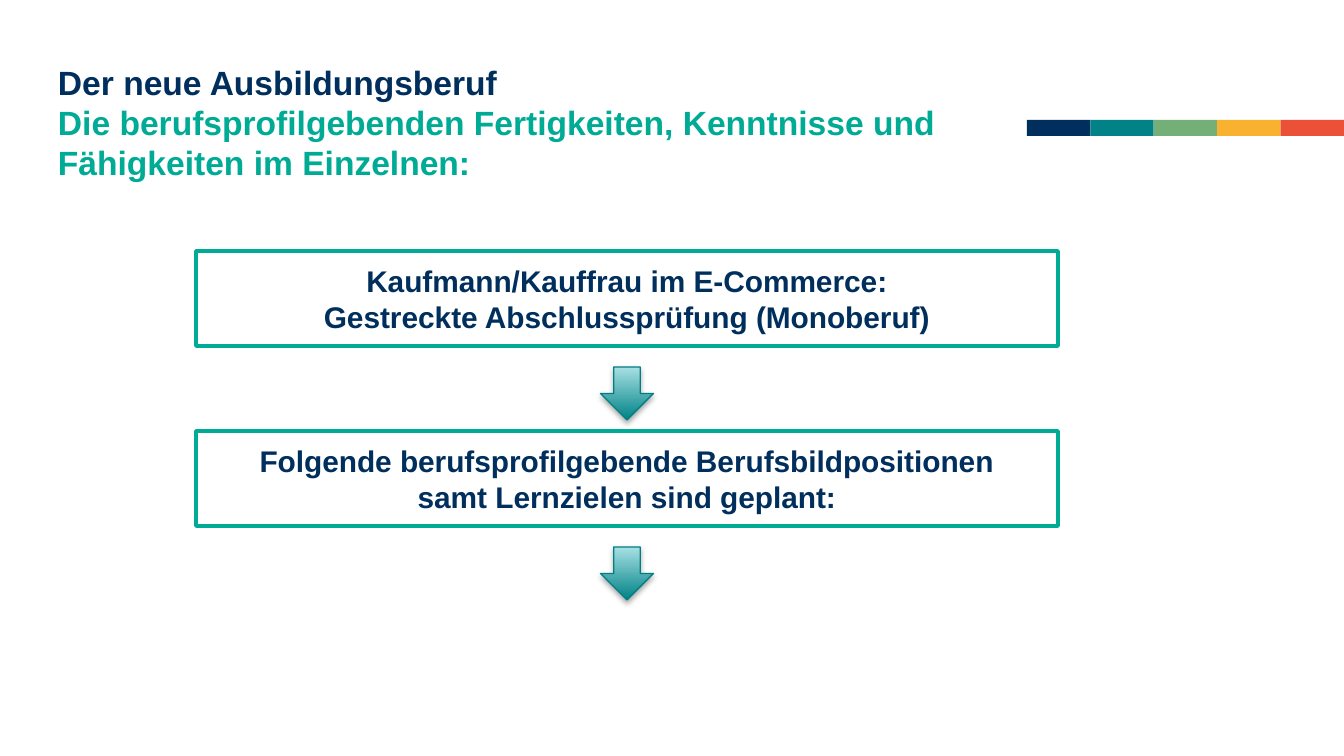
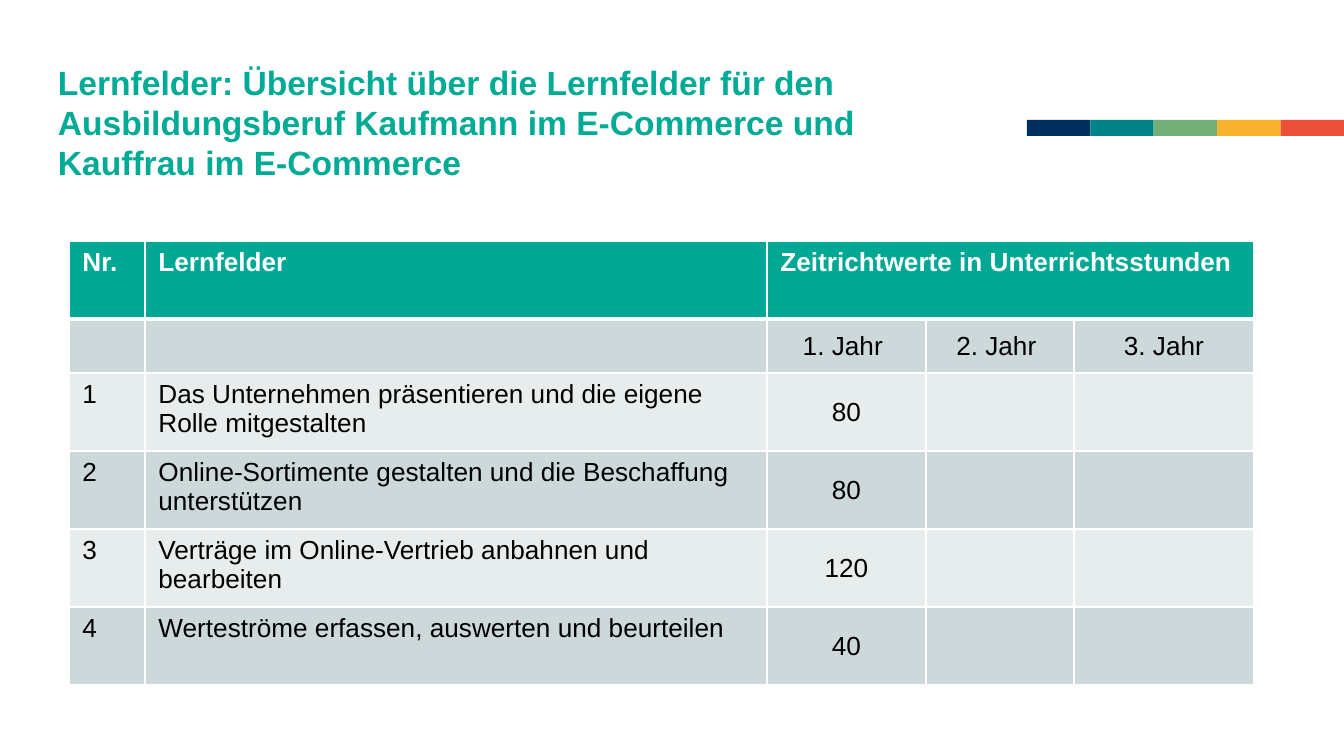
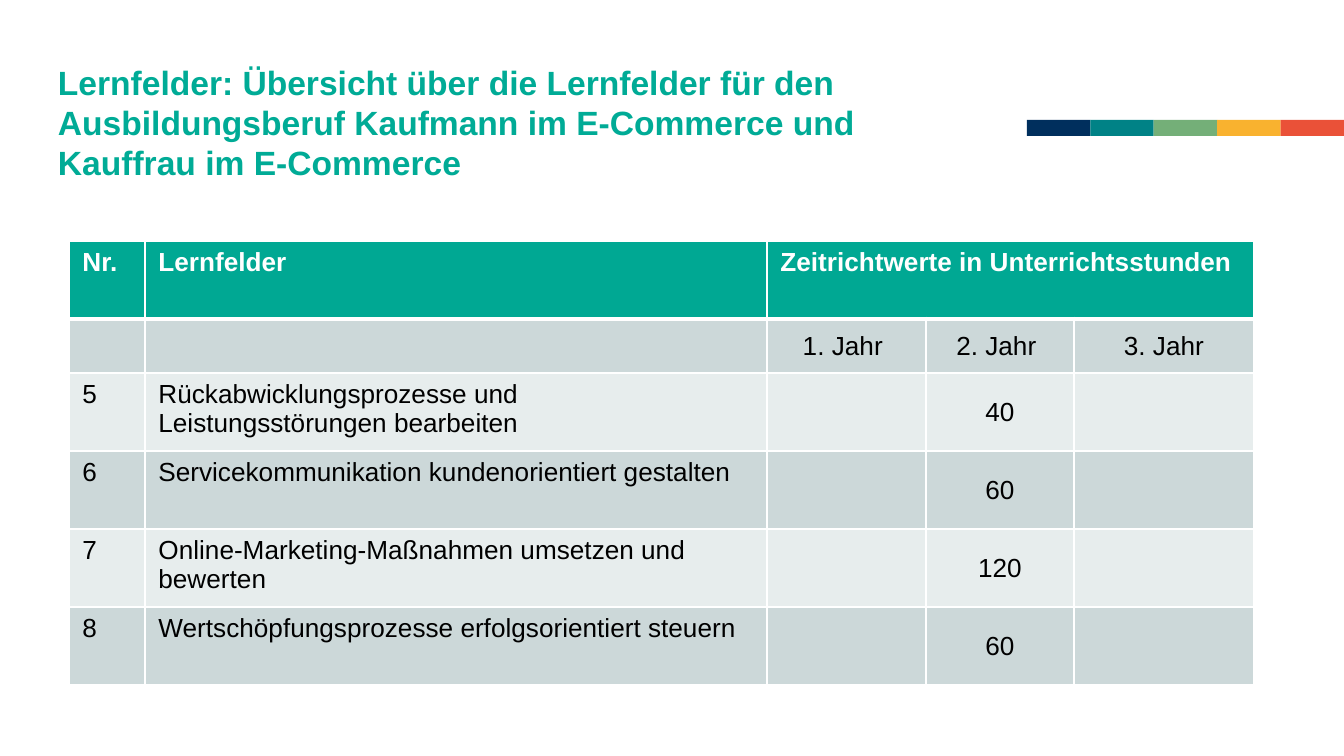
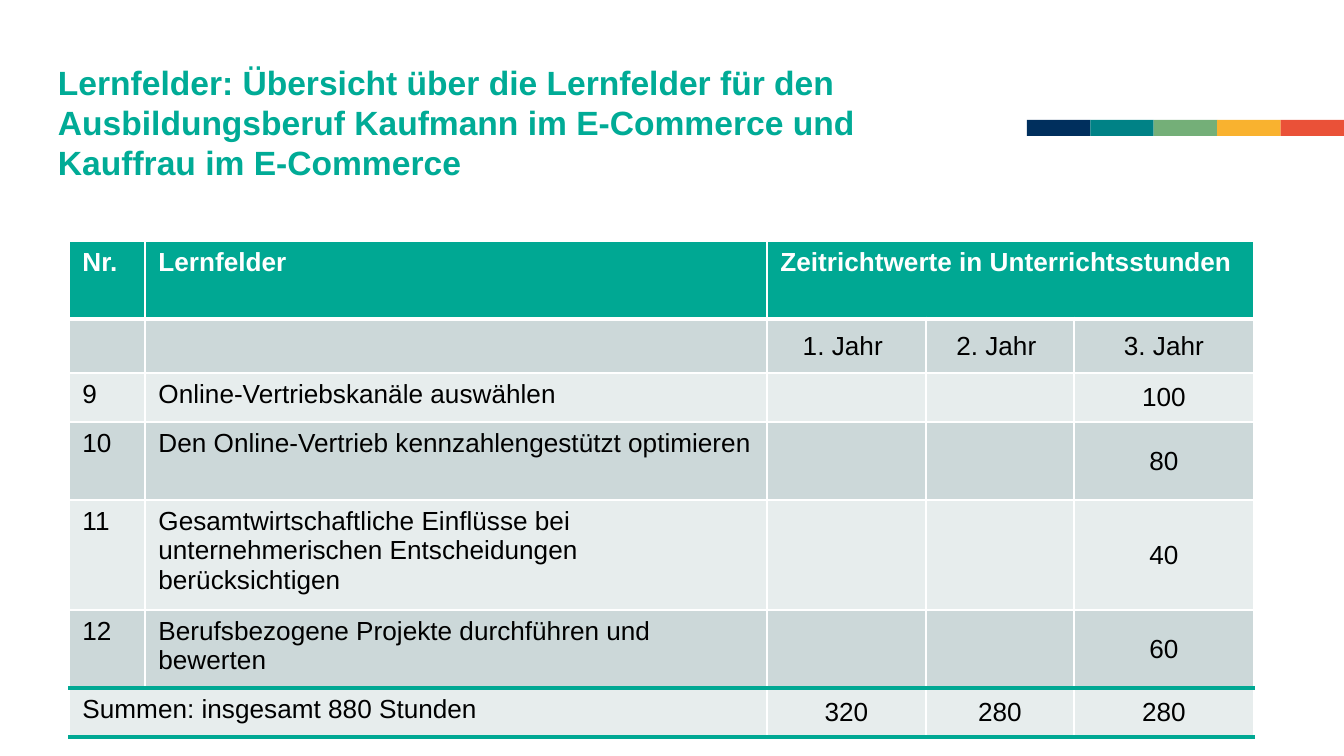
"""Build four slides on the e-commerce apprenticeship and its learning fields."""
from dataclasses import dataclass

import pptx
import pptx.dml.color
import pptx.enum.shapes
import pptx.enum.text
import pptx.oxml.ns
import pptx.util
from lxml import etree

SHAPES = pptx.enum.shapes.MSO_SHAPE
ALIGN = pptx.enum.text.PP_ALIGN
ANCHOR = pptx.enum.text.MSO_ANCHOR
qn = pptx.oxml.ns.qn


@dataclass(frozen=True)
class Theme:
    font: str = "Arial"
    navy: str = "002F5D"
    teal: str = "00AB96"
    header: str = "00A893"
    arrow_dark: str = "008286"
    arrow_light: str = "A7E0E4"
    arrow_edge: str = "007F83"
    white: str = "FFFFFF"
    black: str = "000000"
    row_fills: tuple = ("E7EDED", "CCD8D9")
    band: tuple = ("002F5D", "008286", "74AF78", "F9B22F", "EA5138")
    title_size: float = 18
    title_pitch: float = 21.5
    step_size: float = 16
    step_pitch: float = 19.3
    table_size: float = 14


THEME = Theme()
PX = 914400 / 134.4
SLIDE = (1344, 756)
BAND = (1027, 120, 317, 16)
STEP = (196, 251, 862, 95)
STEP_PITCH = 180
ARROW_SIZE = 53
ARROW_GAP = 21
TABLE_AT = (69, 241)
COLUMNS = (76, 622, 159, 148, 180)
HEADER_ROWS = (78, 54)

PROFESSION_TITLE = [
    ("Der neue Ausbildungsberuf", THEME.navy),
    ("Die berufsprofilgebenden Fertigkeiten, Kenntnisse und Fähigkeiten im Einzelnen:", THEME.teal),
]
STEPS = [
    "Kaufmann/Kauffrau im E-Commerce:\vGestreckte Abschlussprüfung (Monoberuf)",
    "Folgende berufsprofilgebende Berufsbildpositionen\nsamt Lernzielen sind geplant:",
]
FIELDS_TITLE = [
    ("Lernfelder: Übersicht über die Lernfelder für den Ausbildungsberuf "
     "Kaufmann im E-Commerce und Kauffrau im E-Commerce", THEME.teal),
]
HEADER = [
    ("Nr.", "Lernfelder", "Zeitrichtwerte in Unterrichtsstunden", "", ""),
    ("", "", "1. Jahr ", "2. Jahr ", "3. Jahr"),
]
YEARS = [
    {"year": 1, "heights": (78, 78, 78, 78), "fields": [
        (1, "Das Unternehmen präsentieren und die eigene Rolle mitgestalten", 80),
        (2, "Online-Sortimente gestalten und die Beschaffung unterstützen", 80),
        (3, "Verträge im Online-Vertrieb anbahnen und bearbeiten", 120),
        (4, "Werteströme erfassen, auswerten und beurteilen", 40)]},
    {"year": 2, "heights": (78, 78, 78, 78), "fields": [
        (5, "Rückabwicklungsprozesse und Leistungsstörungen bearbeiten", 40),
        (6, "Servicekommunikation kundenorientiert gestalten", 60),
        (7, "Online-Marketing-Maßnahmen umsetzen und bewerten", 120),
        (8, "Wertschöpfungsprozesse erfolgsorientiert steuern", 60)]},
    {"year": 3, "heights": (49, 78, 110, 78, 49), "fields": [
        (9, "Online-Vertriebskanäle auswählen", 100),
        (10, "Den Online-Vertrieb kennzahlengestützt optimieren", 80),
        (11, "Gesamtwirtschaftliche Einflüsse bei unternehmerischen Entscheidungen berücksichtigen", 40),
        (12, "Berufsbezogene Projekte durchführen und bewerten", 60)],
     "totals": ("Summen: insgesamt 880 Stunden", "", "320", "280", "280")},
]


def px(*lengths):
    return [pptx.util.Emu(round(length * PX)) for length in lengths]


def rgb(color):
    return pptx.dml.color.RGBColor.from_string(color)


def style_run(run, size, color, bold):
    run.font.name = THEME.font
    run.font.size = pptx.util.Pt(size)
    run.font.bold = bold
    run.font.color.rgb = rgb(color)


def add_box(slide, preset, box, fill, edge=None, width=0):
    shape = slide.shapes.add_shape(preset, *px(*box))
    shape.shadow.inherit = False
    shape.fill.solid()
    shape.fill.fore_color.rgb = rgb(fill)
    if edge:
        shape.line.color.rgb = rgb(edge)
        shape.line.width = pptx.util.Pt(width)
    else:
        shape.line.fill.background()
    return shape


def add_titled_slide(deck, title, width, height):
    slide = deck.slides.add_slide(deck.slide_layouts[6])
    left, top, band_width, band_height = BAND
    stripe = band_width / len(THEME.band)
    for i, color in enumerate(THEME.band):
        add_box(slide, SHAPES.RECTANGLE, (left + i * stripe, top, stripe, band_height), color)
    frame = slide.shapes.add_textbox(*px(58, 62, width, height)).text_frame
    frame.word_wrap = True
    frame.margin_left = frame.margin_top = frame.margin_right = frame.margin_bottom = 0
    frame.text = "\v".join(text for text, _ in title)
    heading = frame.paragraphs[0]
    heading.line_spacing = pptx.util.Pt(THEME.title_pitch)
    for run, (_, color) in zip(heading.runs, title):
        style_run(run, THEME.title_size, color, True)
    return slide


def add_step(slide, index, text):
    left, top, width, height = STEP
    top += index * STEP_PITCH
    step = add_box(slide, SHAPES.RECTANGLE, (left, top, width, height), THEME.white, THEME.teal, 2)
    frame = step.text_frame
    frame.word_wrap = False
    frame.vertical_anchor = ANCHOR.MIDDLE
    frame.text = text
    for paragraph in frame.paragraphs:
        paragraph.alignment = ALIGN.CENTER
        paragraph.line_spacing = pptx.util.Pt(THEME.step_pitch)
        for run in paragraph.runs:
            style_run(run, THEME.step_size, THEME.navy, True)
    add_arrow(slide, left + (width - ARROW_SIZE) / 2, top + height + ARROW_GAP)


def add_arrow(slide, left, top):
    arrow = add_box(slide, SHAPES.DOWN_ARROW, (left, top, ARROW_SIZE, ARROW_SIZE),
                    THEME.arrow_dark, THEME.arrow_edge, 0.75)
    arrow.fill.gradient()
    arrow.fill.gradient_angle = 90
    for stop, color in zip(arrow.fill.gradient_stops, (THEME.arrow_dark, THEME.arrow_light)):
        stop.color.rgb = rgb(color)
    effects = arrow._element.spPr.find(qn("a:effectLst"))
    shadow = etree.SubElement(effects, qn("a:outerShdw"), blurRad=str(pptx.util.Pt(3.1)),
                              dist=str(pptx.util.Pt(1.8)), dir="5400000", rotWithShape="0")
    shade = etree.SubElement(shadow, qn("a:srgbClr"), val=THEME.black)
    etree.SubElement(shade, qn("a:alpha"), val="35000")


def add_border(cell, side, color, width):
    edge = etree.SubElement(cell._tc.get_or_add_tcPr(), qn("a:" + side), w=str(pptx.util.Pt(width)))
    fill = etree.SubElement(edge, qn("a:solidFill"))
    etree.SubElement(fill, qn("a:srgbClr"), val=color)


def fill_cell(cell, text, row, column, rules):
    thin = (THEME.white, 1)
    for side, rule in (("lnL", thin), ("lnR", thin), ("lnT", rules[row]), ("lnB", rules[row + 1])):
        add_border(cell, side, *rule)
    cell.fill.solid()
    cell.fill.fore_color.rgb = rgb(THEME.row_fills[row % 2] if row else THEME.header)
    cell.text_frame.text = text
    paragraph = cell.text_frame.paragraphs[0]
    if row and column >= 2:
        cell.vertical_anchor = ANCHOR.MIDDLE
        paragraph.alignment = ALIGN.CENTER
    for run in paragraph.runs:
        style_run(run, THEME.table_size, THEME.black if row else THEME.white, row == 0)
    etree.SubElement(paragraph._p, qn("a:endParaRPr"), sz=str(THEME.table_size * 100))


def add_fields_table(slide, plan):
    rows = HEADER + [
        (str(number), name, *(str(hours) if year == plan["year"] else "" for year in (1, 2, 3)))
        for number, name, hours in plan["fields"]]
    rules = [(THEME.white, 3 if i == 1 else 1) for i in range(len(rows) + 1)]
    if "totals" in plan:
        rows.append(plan["totals"])
        rules[-1:] = [(THEME.header, 2.25)] * 2
    heights = HEADER_ROWS + plan["heights"]
    table = slide.shapes.add_table(
        len(rows), len(COLUMNS), *px(*TABLE_AT, sum(COLUMNS), sum(heights))).table
    table.horz_banding = False
    for column, width in zip(table.columns, px(*COLUMNS)):
        column.width = width
    for row, height in zip(table.rows, px(*heights)):
        row.height = height
    for r, texts in enumerate(rows):
        for c, text in enumerate(texts):
            fill_cell(table.cell(r, c), text, r, c, rules)
    table.cell(0, 2).merge(table.cell(0, 4))
    if "totals" in plan:
        last = len(rows) - 1
        table.cell(last, 0).merge(table.cell(last, 1))


def main():
    deck = pptx.Presentation()
    deck.slide_width, deck.slide_height = px(*SLIDE)
    profession = add_titled_slide(deck, PROFESSION_TITLE, 907, 74)
    for index, text in enumerate(STEPS):
        add_step(profession, index, text)
    for plan in YEARS:
        add_fields_table(add_titled_slide(deck, FIELDS_TITLE, 931, 99), plan)
    deck.save("out.pptx")


if __name__ == "__main__":
    main()
